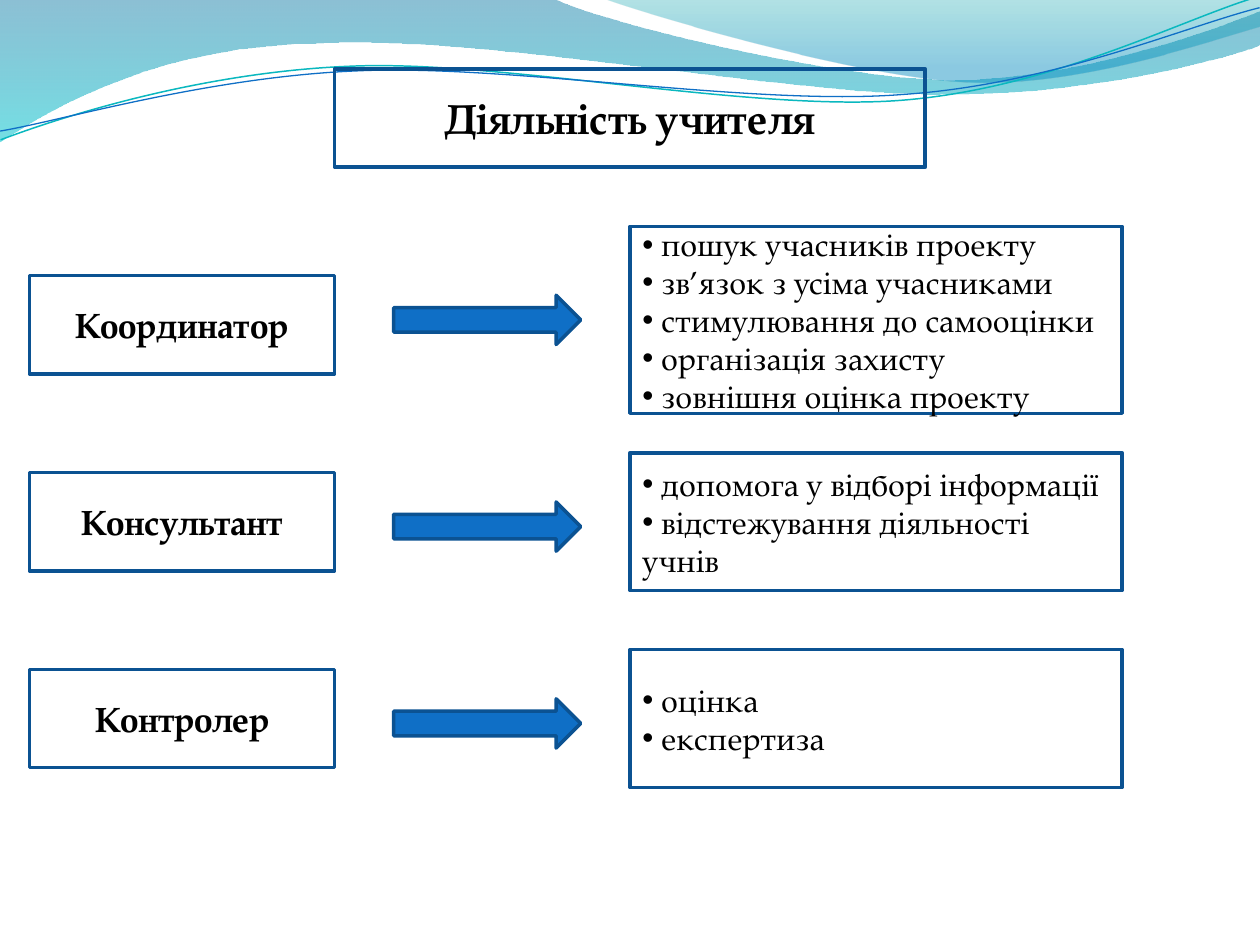
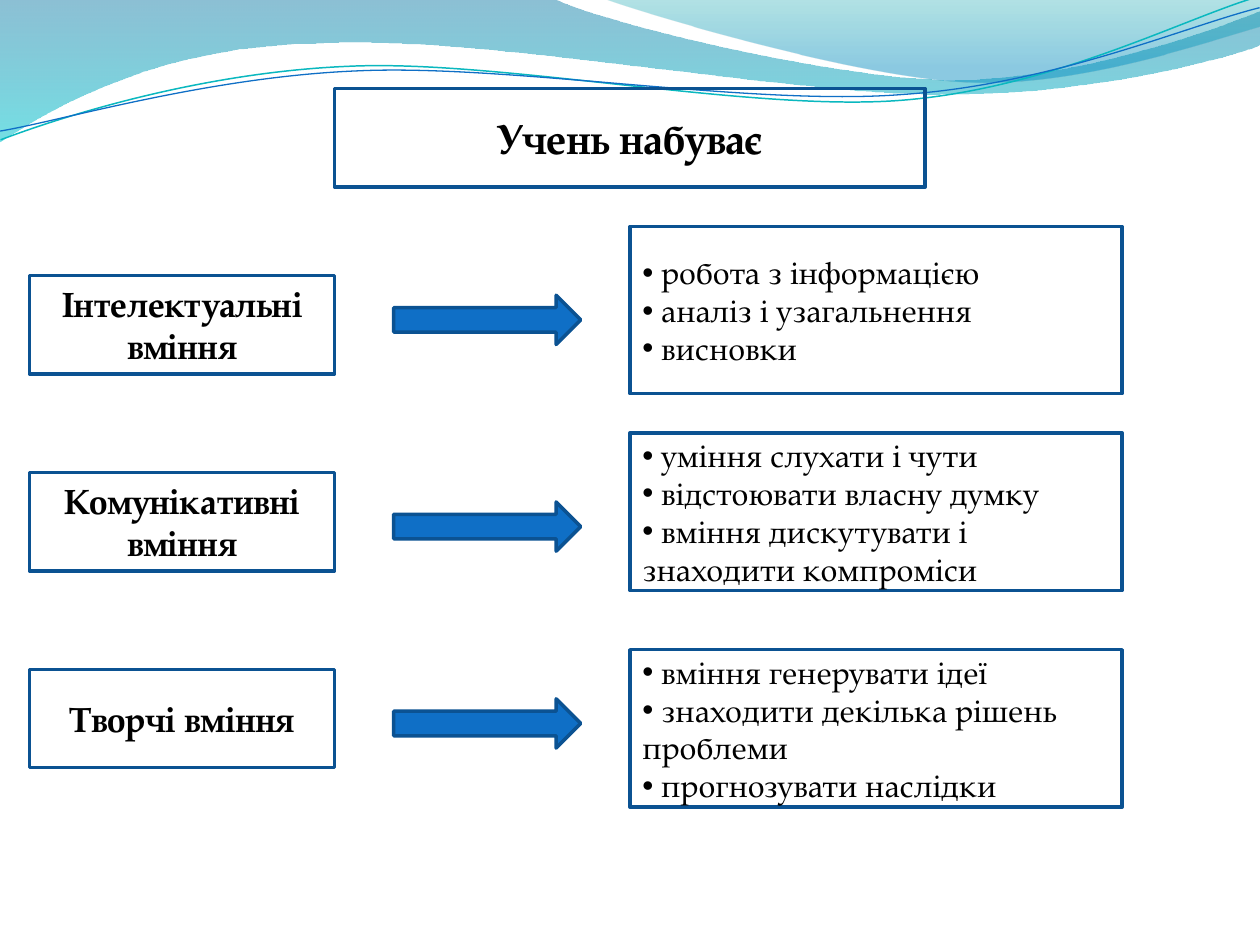
from dataclasses import dataclass

from lxml.etree import SubElement
from pptx import Presentation
from pptx.dml.color import RGBColor
from pptx.enum.shapes import MSO_SHAPE
from pptx.enum.text import MSO_ANCHOR, PP_ALIGN
from pptx.oxml.ns import qn
from pptx.shapes.autoshape import Shape
from pptx.slide import Slide
from pptx.text.text import _Paragraph as Paragraph
from pptx.util import Emu, Pt

PX = 914400 / 128
FONT = "TeX Gyre Pagella"
COLORS = {
    "text": "000000",
    "border": "0B5292",
    "arrow": "0F6FC6",
    "teal_line": "0AB8BF",
    "wave_top": "0074A1",
    "wave_bottom": "00C6CF",
    "crest_top": "00A1A9",
    "crest_bottom": "008BBF",
}
BORDER_PT = 2
LINE_TILT = 357.3

TITLE_LEFT, TITLE_WIDTH, BOX_HEIGHT = 340, 600, 100
LABEL_LEFT, LABEL_WIDTH = 30, 310
LABEL_TOP, LABEL_PITCH = 280, 200
ARROW_LEFT, ARROW_WIDTH, ARROW_HEIGHT = 400, 190, 50
ARROW_TOPS = (300, 510, 710)
DETAIL_LEFT, DETAIL_WIDTH = 640, 500

Point = tuple[int, int]


@dataclass(frozen=True)
class GradientStop:
    position: float
    color: str
    opacity: int


@dataclass(frozen=True)
class Wave:
    start: Point
    segments: tuple[tuple[Point, ...], ...]
    stops: tuple[GradientStop, ...] = ()
    line_color: str = ""
    line_pt: float = 0


@dataclass(frozen=True)
class Role:
    label: str
    detail_top: int
    detail_height: int
    details: tuple[str, ...]


@dataclass(frozen=True)
class Scheme:
    title: str
    title_top: int
    roles: tuple[Role, ...]


WAVES = (
    Wave(
        (0, 0),
        (
            ((563, -1),),
            ((609, 22), (850, 81), (970, 81)),
            ((1091, 81), (1226, 33), (1280, 12)),
            ((1281, 46),),
            ((1258, 56), (1114, 97), (955, 96)),
            ((796, 96), (489, 36), (329, 44)),
            ((165, 46), (59, 106), (-1, 145)),
            ((0, 0),),
        ),
        stops=(GradientStop(0, "wave_top", 45), GradientStop(1, "wave_bottom", 55)),
    ),
    Wave(
        (613, -1),
        (
            ((652, 14), (873, 79), (984, 83)),
            ((1096, 88), (1230, 41), (1280, 27)),
            ((1280, 0),),
            ((613, -1),),
        ),
        stops=(GradientStop(0, "crest_top", 30), GradientStop(0.8, "crest_bottom", 45)),
    ),
    Wave(
        (-2, 112),
        (
            ((59, 92), (203, 53), (355, 54)),
            ((507, 54), (757, 119), (911, 115)),
            ((1065, 111), (1203, 46), (1280, 27)),
        ),
        line_color="teal_line",
        line_pt=0.85,
    ),
    Wave(
        (-2, 103),
        (
            ((58, 96), (211, 58), (363, 59)),
            ((517, 59), (762, 114), (916, 109)),
            ((1069, 106), (1207, 53), (1282, 38)),
        ),
        line_color="arrow",
        line_pt=0.75,
    ),
)

SCHEMES = (
    Scheme("Діяльність учителя", 70, (
        Role("Координатор", 230, 190, (
            "пошук учасників проекту",
            "зв’язок з усіма учасниками",
            "стимулювання до самооцінки",
            "організація захисту",
            "зовнішня оцінка проекту",
        )),
        Role("Консультант", 460, 140, (
            "допомога у відборі інформації",
            "відстежування діяльності учнів",
        )),
        Role("Контролер", 660, 140, ("оцінка", "експертиза")),
    )),
    Scheme("Учень набуває", 90, (
        Role("Інтелектуальні вміння", 230, 170, (
            "робота з інформацією",
            "аналіз і узагальнення",
            "висновки",
        )),
        Role("Комунікативні вміння", 440, 160, (
            "уміння слухати і чути",
            "відстоювати власну думку",
            "вміння дискутувати і знаходити компроміси",
        )),
        Role("Творчі вміння", 660, 160, (
            "вміння генерувати ідеї",
            "знаходити декілька рішень проблеми",
            "прогнозувати наслідки",
        )),
    )),
)


def px(length: int) -> Emu:
    return Emu(round(length * PX))


def rgb(color: str) -> RGBColor:
    return RGBColor.from_string(COLORS[color])


def bend_segments(shape: Shape, wave: Wave) -> None:
    edges = list(shape.element.spPr.iter(qn("a:lnTo")))
    for edge, (*controls, _) in zip(edges, wave.segments):
        if not controls:
            continue
        edge.tag = qn("a:cubicBezTo")
        end = edge[0]
        for x, y in controls:
            SubElement(edge, qn("a:pt"), x=str(px(x) - shape.left), y=str(px(y) - shape.top))
        edge.append(end)


def fill_gradient(shape: Shape, stops: tuple[GradientStop, ...]) -> None:
    shape.fill.gradient()
    shape.fill.gradient_angle = 270
    for target, stop in zip(shape.fill.gradient_stops, stops):
        target.position = stop.position
        target.color.rgb = rgb(stop.color)
    for srgb, stop in zip(shape.element.spPr.iter(qn("a:srgbClr")), stops):
        SubElement(srgb, qn("a:alpha"), val=str(stop.opacity * 1000))


def draw_wave(slide: Slide, wave: Wave) -> None:
    builder = slide.shapes.build_freeform(*map(px, wave.start), scale=1.0)
    ends = [tuple(map(px, segment[-1])) for segment in wave.segments]
    builder.add_line_segments(ends, close=bool(wave.stops))
    shape = builder.convert_to_shape()
    bend_segments(shape, wave)
    shape.shadow.inherit = False
    if wave.stops:
        fill_gradient(shape, wave.stops)
        shape.line.fill.background()
    else:
        shape.rotation = LINE_TILT
        shape.fill.background()
        shape.line.color.rgb = rgb(wave.line_color)
        shape.line.width = Pt(wave.line_pt)


def draw_bordered(slide: Slide, preset: MSO_SHAPE, left: int, top: int,
                  width: int, height: int) -> Shape:
    shape = slide.shapes.add_shape(preset, px(left), px(top), px(width), px(height))
    shape.shadow.inherit = False
    shape.fill.background()
    shape.line.color.rgb = rgb("border")
    shape.line.width = Pt(BORDER_PT)
    return shape


def add_bullet(paragraph: Paragraph) -> None:
    properties = paragraph._p.get_or_add_pPr()
    SubElement(properties, qn("a:buFont"), typeface="Arial")
    SubElement(properties, qn("a:buChar"), char="•")


def draw_box(slide: Slide, left: int, top: int, width: int, height: int,
             lines: tuple[str, ...], size: int, bulleted: bool = False) -> None:
    box = draw_bordered(slide, MSO_SHAPE.RECTANGLE, left, top, width, height)
    frame = box.text_frame
    frame.word_wrap = True
    frame.vertical_anchor = MSO_ANCHOR.MIDDLE
    for index, line in enumerate(lines):
        paragraph = frame.add_paragraph() if index else frame.paragraphs[0]
        paragraph.alignment = PP_ALIGN.LEFT if bulleted else PP_ALIGN.CENTER
        if bulleted:
            add_bullet(paragraph)
        run = paragraph.add_run()
        run.text = f" {line}" if bulleted else line
        run.font.name = FONT
        run.font.size = Pt(size)
        run.font.bold = not bulleted
        run.font.color.rgb = rgb("text")


def draw_arrow(slide: Slide, top: int) -> None:
    arrow = draw_bordered(slide, MSO_SHAPE.RIGHT_ARROW, ARROW_LEFT, top, ARROW_WIDTH, ARROW_HEIGHT)
    arrow.fill.solid()
    arrow.fill.fore_color.rgb = rgb("arrow")


def draw_scheme(slide: Slide, scheme: Scheme) -> None:
    for wave in WAVES:
        draw_wave(slide, wave)
    draw_box(slide, TITLE_LEFT, scheme.title_top, TITLE_WIDTH, BOX_HEIGHT, (scheme.title,), 24)
    for row, role in enumerate(scheme.roles):
        label_top = LABEL_TOP + row * LABEL_PITCH
        draw_box(slide, LABEL_LEFT, label_top, LABEL_WIDTH, BOX_HEIGHT, (role.label,), 20)
    for role in reversed(scheme.roles):
        draw_box(slide, DETAIL_LEFT, role.detail_top, DETAIL_WIDTH, role.detail_height,
                 role.details, 18, bulleted=True)
    for arrow_top in ARROW_TOPS:
        draw_arrow(slide, arrow_top)


def main() -> None:
    presentation = Presentation()
    presentation.slide_width = px(1280)
    presentation.slide_height = px(960)
    blank = presentation.slide_layouts[6]
    for scheme in SCHEMES:
        draw_scheme(presentation.slides.add_slide(blank), scheme)
    presentation.save("out.pptx")


if __name__ == "__main__":
    main()
